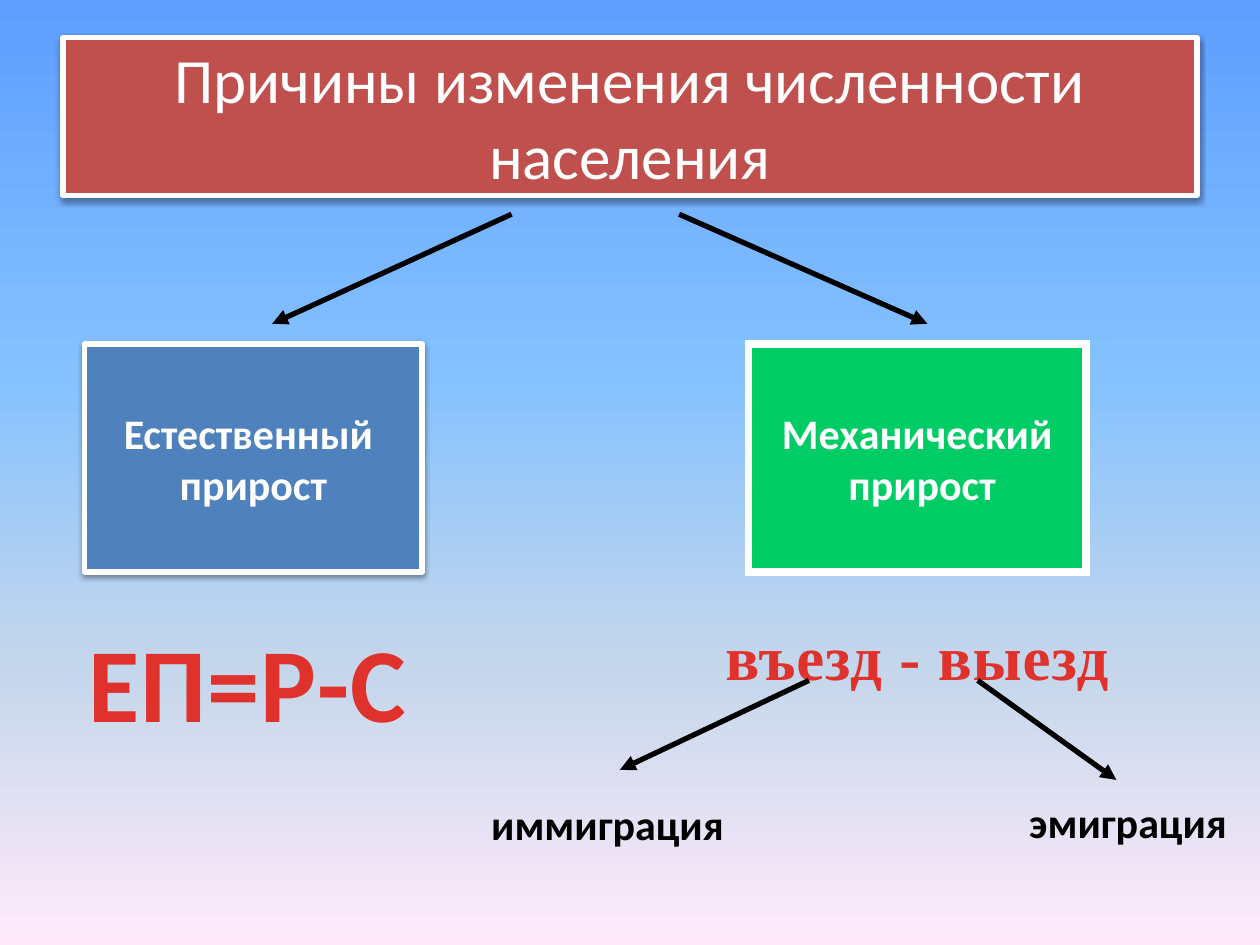
from dataclasses import dataclass

from lxml import etree
from pptx import Presentation
from pptx import util as u
from pptx.dml.color import RGBColor
from pptx.enum import shapes, text
from pptx.oxml.ns import qn

PX = 9144

WHITE = RGBColor(0xFF, 0xFF, 0xFF)
BLACK = RGBColor(0x00, 0x00, 0x00)
BRICK = RGBColor(0xC0, 0x50, 0x4D)
BLUE = RGBColor(0x4F, 0x81, 0xBD)
GREEN = RGBColor(0x00, 0xCC, 0x66)
RED = RGBColor(0xE0, 0x32, 0x2D)
SKY = (
    (0, RGBColor(0x5E, 0x9E, 0xFF)),
    (40, RGBColor(0x85, 0xC2, 0xFF)),
    (70, RGBColor(0xC4, 0xD6, 0xEB)),
    (100, RGBColor(0xFF, 0xEB, 0xFA)),
)


@dataclass(frozen=True)
class Wording:
    lines: tuple[str, ...]
    size: int
    color: RGBColor = WHITE
    bold: bool = True
    font: str = "Calibri"
    spacing: int = 0
    align: text.PP_ALIGN = text.PP_ALIGN.CENTER
    wrap: bool = False


@dataclass(frozen=True)
class Box:
    at: tuple[int, int, int, int]
    fill: RGBColor
    wording: Wording
    border: float = 3
    raised: bool = True


@dataclass(frozen=True)
class Label:
    at: tuple[int, int, int, int]
    wording: Wording
    grow: bool = False


@dataclass(frozen=True)
class Arrow:
    start: tuple[int, int]
    end: tuple[int, int]


BOXES = (
    Box((50, 30, 900, 125), BRICK,
        Wording(("Причины изменения численности населения",), 36, bold=False, wrap=True)),
    Box((67, 273, 268, 181), BLUE, Wording(("Естественный ", "прирост"), 24)),
    Box((594, 273, 268, 181), GREEN, Wording(("Механический", " прирост"), 24),
        border=4.5, raised=False),
)
LABELS = (
    Label((51, 485, 291, 55), Wording(("ЕП=Р-С",), 60, RED, spacing=50)),
    Label((553, 485, 350, 53),
          Wording(("въезд - выезд",), 36, RED, font="Times New Roman", spacing=50)),
    Label((380, 629, 207, 50),
          Wording(("иммиграция",), 24, BLACK, align=text.PP_ALIGN.LEFT), grow=True),
    Label((807, 627, 179, 50),
          Wording(("эмиграция",), 24, BLACK, align=text.PP_ALIGN.LEFT), grow=True),
)
ARROWS = (
    Arrow((406, 170), (216, 257)),
    Arrow((539, 170), (736, 257)),
    Arrow((642, 540), (492, 611)),
    Arrow((776, 540), (886, 619)),
)


def emu(lengths: tuple[int, ...]) -> list[int]:
    return [length * PX for length in lengths]


def paint_sky(slide) -> None:
    fill = slide.background.fill
    fill.gradient()
    fill.gradient_angle = 270
    stops = next(slide.element.iter(qn("a:gsLst")))
    for stop in list(stops):
        stops.remove(stop)
    for percent, color in SKY:
        stop = etree.SubElement(stops, qn("a:gs"), pos=str(percent * 1000))
        etree.SubElement(stop, qn("a:srgbClr"), val=str(color))


def write(frame, wording: Wording) -> None:
    frame.word_wrap = wording.wrap
    for index, line in enumerate(wording.lines):
        paragraph = frame.add_paragraph() if index else frame.paragraphs[0]
        paragraph.alignment = wording.align
        run = paragraph.add_run()
        run.text = line
        run.font.name = wording.font
        run.font.size = u.Pt(wording.size)
        run.font.bold = wording.bold
        run.font.color.rgb = wording.color
        if wording.spacing:
            run.font._element.set("spc", str(wording.spacing))


def cast_shadow(panel) -> None:
    effects = panel._element.spPr.find(qn("a:effectLst"))
    shadow = etree.SubElement(effects, qn("a:outerShdw"), blurRad="40000",
                              dist="20000", dir="5400000", rotWithShape="0")
    color = etree.SubElement(shadow, qn("a:srgbClr"), val=str(BLACK))
    etree.SubElement(color, qn("a:alpha"), val="38000")


def square_corners(panel) -> None:
    outline = panel._element.spPr.find(qn("a:ln"))
    etree.SubElement(outline, qn("a:miter"), lim="800000")


def draw_box(slide, box: Box) -> None:
    panel = slide.shapes.add_shape(shapes.MSO_SHAPE.RECTANGLE, *emu(box.at))
    panel.fill.solid()
    panel.fill.fore_color.rgb = box.fill
    panel.line.color.rgb = WHITE
    panel.line.width = u.Pt(box.border)
    panel.shadow.inherit = False
    if box.raised:
        cast_shadow(panel)
    else:
        square_corners(panel)
    panel.text_frame.vertical_anchor = text.MSO_ANCHOR.MIDDLE
    write(panel.text_frame, box.wording)


def draw_label(slide, label: Label) -> None:
    frame = slide.shapes.add_textbox(*emu(label.at)).text_frame
    if label.grow:
        frame.auto_size = text.MSO_AUTO_SIZE.SHAPE_TO_FIT_TEXT
    write(frame, label.wording)


def draw_arrow(slide, arrow: Arrow) -> None:
    branch = slide.shapes.add_connector(
        shapes.MSO_CONNECTOR.STRAIGHT, *emu(arrow.start + arrow.end))
    branch.line.color.rgb = BLACK
    branch.line.width = u.Pt(3)
    outline = branch._element.spPr.find(qn("a:ln"))
    etree.SubElement(outline, qn("a:tailEnd"), type="triangle")
    etree.SubElement(branch._element.spPr, qn("a:effectLst"))


def main() -> None:
    deck = Presentation()
    deck.slide_width, deck.slide_height = emu((1000, 750))
    slide = deck.slides.add_slide(deck.slide_layouts[6])
    paint_sky(slide)
    for box in BOXES:
        draw_box(slide, box)
    for label in LABELS:
        draw_label(slide, label)
    for arrow in ARROWS:
        draw_arrow(slide, arrow)
    deck.save("out.pptx")


if __name__ == "__main__":
    main()
